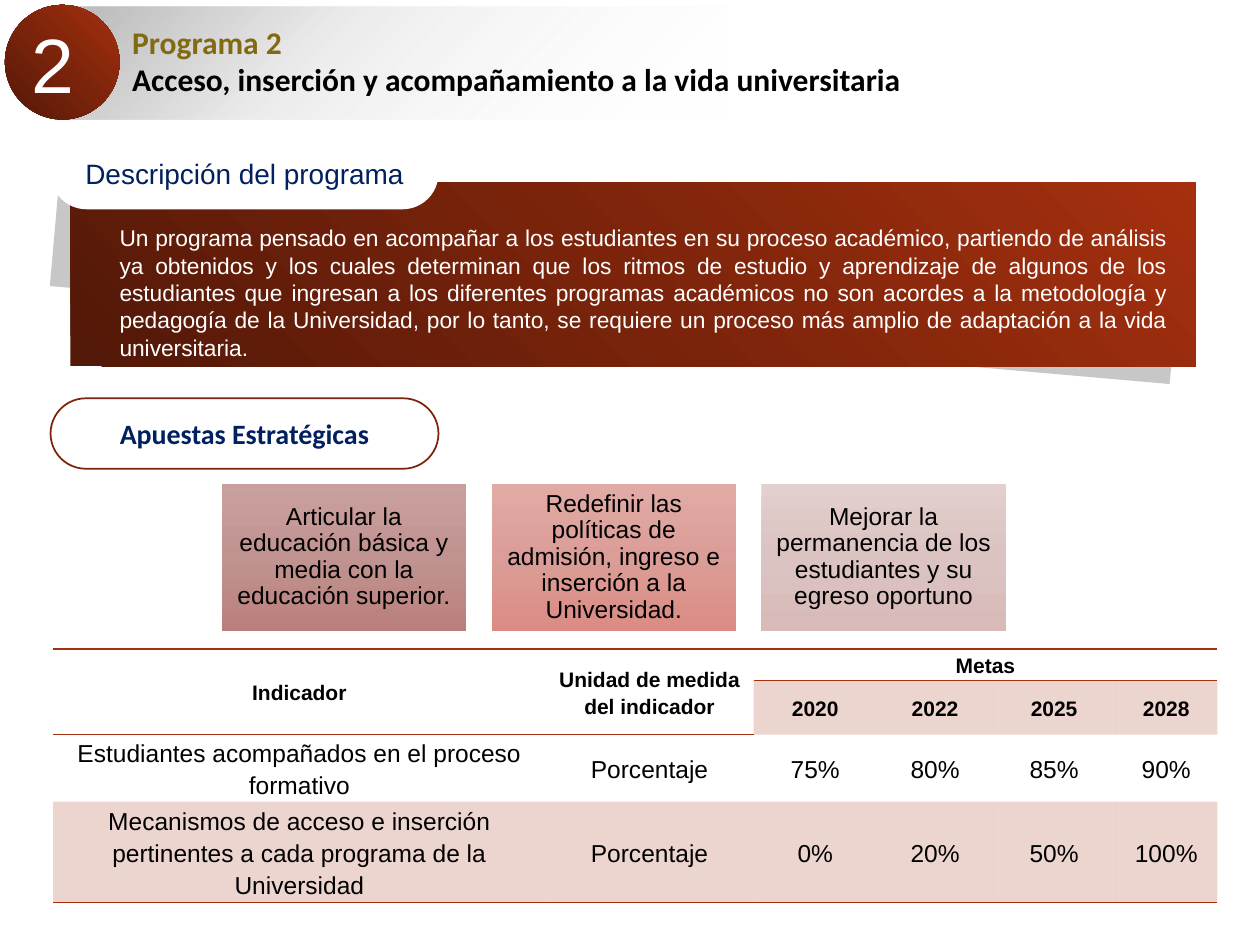
from pptx import Presentation
from pptx.dml.color import RGBColor
from pptx.enum.shapes import MSO_SHAPE
from pptx.enum.text import MSO_ANCHOR, PP_ALIGN
from pptx.oxml.ns import qn
from pptx.util import Cm, Pt
from lxml.etree import SubElement

BRICK = RGBColor(0xA5, 0x30, 0x0F)
RUST = RGBColor(0x7C, 0x24, 0x0B)
MAROON = RGBColor(0x52, 0x18, 0x08)
NAVY = RGBColor(0x00, 0x20, 0x60)
OLIVE = RGBColor(0x82, 0x6A, 0x12)
CHARCOAL = RGBColor(0x32, 0x32, 0x32)
SILVER = RGBColor(0xBF, 0xBF, 0xBF)
WHITE = RGBColor(0xFF, 0xFF, 0xFF)
BLACK = RGBColor(0x00, 0x00, 0x00)
ROSE = [RGBColor(0xCA, 0xA0, 0x9E), RGBColor(0xC0, 0x93, 0x90), RGBColor(0xBA, 0x7F, 0x7C)]
CORAL = [RGBColor(0xE1, 0xAB, 0xA5), RGBColor(0xDB, 0x9D, 0x97), RGBColor(0xDA, 0x8C, 0x84)]
BLUSH = [RGBColor(0xE3, 0xCF, 0xCD), RGBColor(0xDB, 0xC3, 0xC1), RGBColor(0xD8, 0xBA, 0xB8)]
EMBER = [MAROON, RUST, BRICK]
NO_STYLE = "{2D5ABB26-0587-4C30-8999-92F81FD0307C}"


def add_box(kind, left, top, width, height, colors, angle=0, places=(0, 50, 100), alphas=(100, 100, 100)):
    box = page.shapes.add_shape(kind, Cm(left), Cm(top), Cm(width), Cm(height))
    box.shadow.inherit = False
    box.line.fill.background()
    if len(colors) == 1:
        box.fill.solid()
        box.fill.fore_color.rgb = colors[0]
        return box
    box.fill.gradient()
    gradient = box._element.spPr.find(qn("a:gradFill"))
    stops = gradient.find(qn("a:gsLst"))
    for stop in list(stops):
        stops.remove(stop)
    for place, color, alpha in zip(places, colors, alphas):
        stop = SubElement(stops, qn("a:gs"), pos=str(place * 1000))
        tone = SubElement(stop, qn("a:srgbClr"), val=str(color))
        if alpha < 100:
            SubElement(tone, qn("a:alpha"), val=str(alpha * 1000))
    gradient.find(qn("a:lin")).set("ang", str(angle * 60000))
    return box


def write(frame, text, size, color, align=PP_ALIGN.CENTER, font="Arial", bold=False, spacing=None):
    frame.text = text
    frame.word_wrap = True
    for paragraph in frame.paragraphs:
        paragraph.alignment = align
        paragraph.line_spacing = spacing
        for span in paragraph.runs:
            span.font.size = Pt(size)
            span.font.name = font
            span.font.bold = bold
            span.font.color.rgb = color


deck = Presentation()
deck.slide_width = Cm(25.4)
deck.slide_height = Cm(19.05)
page = deck.slides.add_slide(deck.slide_layouts[5])
translucent = []

goals = [
    ["Indicador", "Unidad de medida del indicador", "Metas", "", "", ""],
    ["", "", "2020", "2022", "2025", "2028"],
    ["Estudiantes acompañados en el proceso formativo", "Porcentaje", "75%", "80%", "85%", "90%"],
    ["Mecanismos de acceso e inserción pertinentes a cada programa de la Universidad",
     "Porcentaje", "0%", "20%", "50%", "100%"],
]
table_frame = page.shapes.add_table(4, 6, Cm(1.07), Cm(13.08), Cm(23.47), Cm(4.73))
table = table_frame.table
table.first_row = False
table.horz_banding = False
table._tbl.tblPr.find(qn("a:tableStyleId")).text = NO_STYLE
for column, width in zip(table.columns, (9.93, 4.19, 2.49, 2.34, 2.46, 2.06)):
    column.width = Cm(width)
for row, height in zip(table.rows, (0.64, 0.71, 1.35, 2.03)):
    row.height = Cm(height)
table.cell(0, 0).merge(table.cell(1, 0))
table.cell(0, 1).merge(table.cell(1, 1))
table.cell(0, 2).merge(table.cell(0, 5))
for row_index, texts in enumerate(goals):
    for column_index, text in enumerate(texts):
        cell = table.cell(row_index, column_index)
        heading = row_index < 2
        if text:
            write(cell.text_frame, text, 12 if heading else 14, BLACK, bold=heading, spacing=1.15)
        cell.vertical_anchor = MSO_ANCHOR.MIDDLE
        cell.margin_left = cell.margin_right = Cm(0.13)
        cell.margin_top = cell.margin_bottom = 0
        properties = cell._tc.get_or_add_tcPr()
        sides = ["a:lnT"] if row_index == 0 else []
        if row_index in (0, 3) or (row_index == 1 and column_index < 2):
            sides.append("a:lnB")
        for side in sides:
            border = SubElement(properties, qn(side), w=str(Pt(1)))
            SubElement(SubElement(border, qn("a:solidFill")), qn("a:srgbClr"), val=str(BRICK))
        if row_index == 3 or (row_index == 1 and column_index > 1):
            cell.fill.solid()
            cell.fill.fore_color.rgb = BRICK
            translucent.append((properties, 20))
        else:
            cell.fill.background()

tilted_shade = add_box(MSO_SHAPE.RECTANGLE, 1.07, 4.32, 22.66, 2.44, [CHARCOAL])
tilted_shade.rotation = 5
translucent.append((tilted_shade._element.spPr, 27))
add_box(MSO_SHAPE.RECTANGLE, 1.42, 3.68, 22.68, 3.71, EMBER, 315)

description_label = add_box(MSO_SHAPE.ROUNDED_RECTANGLE, 1.02, 2.77, 7.82, 1.45, [WHITE])
description_label.adjustments[0] = 0.5
write(description_label.text_frame, "Descripción del programa", 16, NAVY)

description = page.shapes.add_textbox(Cm(2.16), Cm(4.39), Cm(21.59), Cm(3.02))
write(
    description.text_frame,
    "Un programa pensado en acompañar a los estudiantes en su proceso académico, partiendo de análisis "
    "ya obtenidos y los cuales determinan que los ritmos de estudio y aprendizaje de algunos de los "
    "estudiantes que ingresan a los diferentes programas académicos no son acordes a la metodología y "
    "pedagogía de la Universidad, por lo tanto, se requiere un proceso más amplio de adaptación a la vida "
    "universitaria.",
    13, WHITE, PP_ALIGN.JUSTIFY,
)

add_box(MSO_SHAPE.RECTANGLE, 0.15, 0.18, 5, 1.63, [WHITE])
add_box(MSO_SHAPE.RECTANGLE, 1.3, 0.13, 13.34, 2.29, [SILVER, SILVER, WHITE], 45, (5, 37, 100), (100, 31, 0))
badge = add_box(MSO_SHAPE.OVAL, 0.1, 0.1, 2.31, 2.31, EMBER, 315)
write(badge.text_frame, "2", 44, WHITE, PP_ALIGN.LEFT)
badge.text_frame.margin_left = badge.text_frame.margin_right = Cm(0.2)
badge.text_frame.margin_top = badge.text_frame.margin_bottom = Cm(0.25)

strategies = [
    ("Articular la educación básica y media con la educación superior.", ROSE),
    ("Redefinir las políticas de admisión, ingreso e inserción a la Universidad.", CORAL),
    ("Mejorar la permanencia de los estudiantes y su egreso oportuno", BLUSH),
]
for index, (text, colors) in enumerate(strategies):
    card = add_box(MSO_SHAPE.RECTANGLE, 4.47 + index * 5.44, 9.75, 4.93, 2.97, colors, 90)
    frame = card.text_frame
    write(frame, text, 14, BLACK, spacing=0.9)
    frame.margin_left = frame.margin_right = frame.margin_top = frame.margin_bottom = Cm(0.15)

strategy_label = add_box(MSO_SHAPE.ROUNDED_RECTANGLE, 1.02, 8.03, 7.82, 1.42, [WHITE])
strategy_label.adjustments[0] = 0.5
strategy_label.line.color.rgb = RUST
strategy_label.line.width = Pt(1)
write(strategy_label.text_frame, "Apuestas Estratégicas", 16, NAVY, font="Calibri", bold=True)

title = page.shapes.title
title.left, title.top, title.width, title.height = Cm(2.41), Cm(0.33), Cm(17.02), Cm(1.8)
write(title.text_frame, "Programa 2\nAcceso, inserción y acompañamiento a la vida universitaria",
      18, BLACK, PP_ALIGN.LEFT, "Calibri", True)
title.text_frame.vertical_anchor = MSO_ANCHOR.TOP
title.text_frame.paragraphs[0].runs[0].font.color.rgb = OLIVE
page.shapes._spTree.append(title._element)

for holder, alpha in translucent:
    tone = holder.find(qn("a:solidFill")).find(qn("a:srgbClr"))
    SubElement(tone, qn("a:alpha"), val=str(alpha * 1000))

deck.save("out.pptx")
